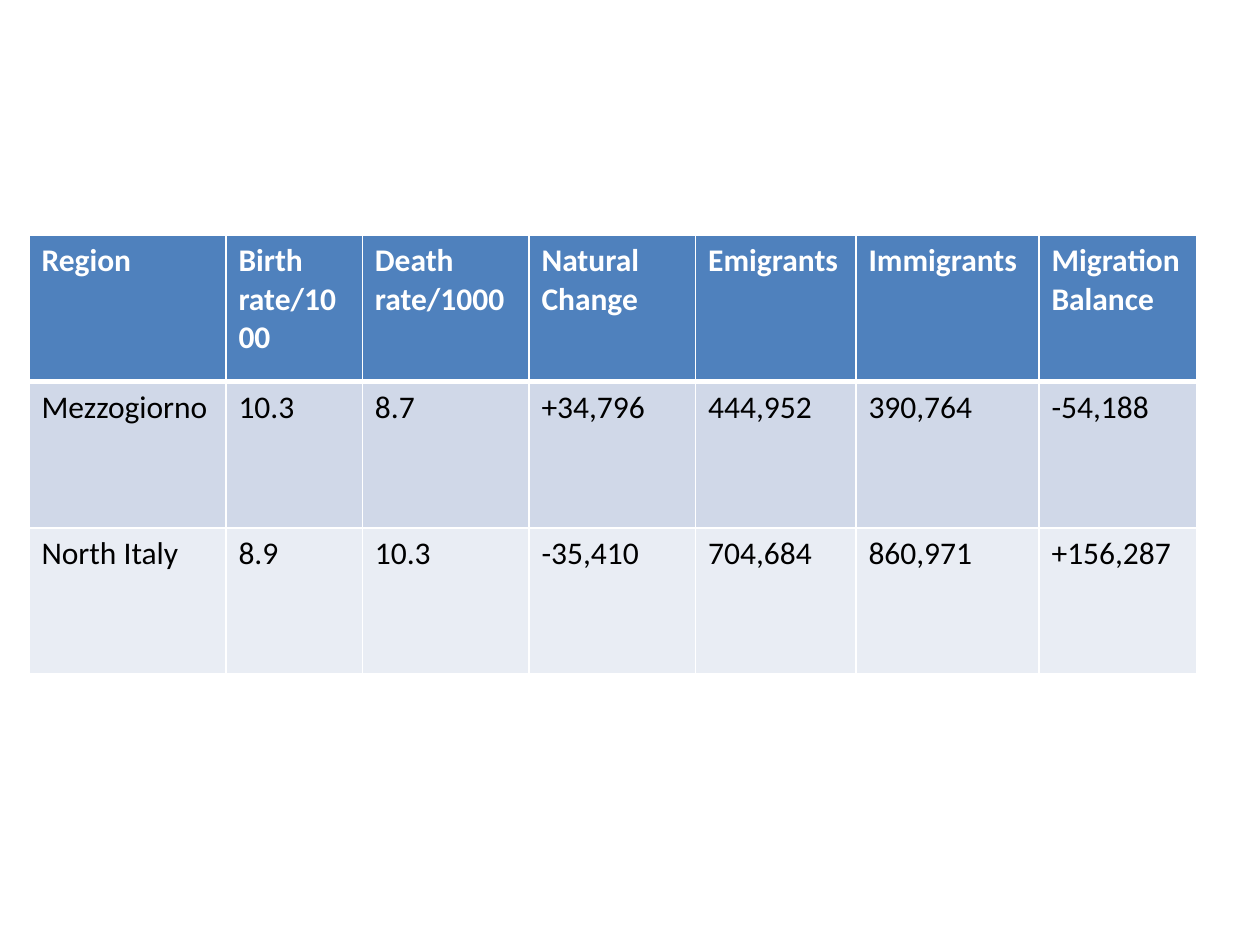
from lxml import etree
from pptx import Presentation
from pptx.dml.color import RGBColor
from pptx.oxml.ns import qn
from pptx.util import Inches, Pt

WHITE = RGBColor(0xFF, 0xFF, 0xFF)
BLACK = RGBColor(0x00, 0x00, 0x00)
HEADER_BLUE = RGBColor(0x4F, 0x81, 0xBD)
BAND_BLUE = RGBColor(0xD0, 0xD8, 0xE8)
BAND_PALE = RGBColor(0xE9, 0xED, 0xF4)
ROW_FILLS = [HEADER_BLUE, BAND_BLUE, BAND_PALE]

COLUMN_WEIGHTS = [1.56, 1.08, 1.32, 1.32, 1.27, 1.45, 1.25]
POPULATION_ROWS = [
    ["Region", "Birth rate/1000", "Death rate/1000", "Natural Change",
     "Emigrants", "Immigrants", "Migration Balance"],
    ["Mezzogiorno", "10.3", "8.7", "+34,796", "444,952", "390,764", "-54,188"],
    ["North Italy", "8.9", "10.3", "-35,410", "704,684", "860,971", "+156,287"],
]


def set_borders(cell, top, bottom):
    properties = cell._tc.get_or_add_tcPr()
    for side, points in (("L", 1), ("R", 1), ("T", top), ("B", bottom)):
        line = etree.SubElement(properties, qn(f"a:ln{side}"), w=str(Pt(points)))
        fill = etree.SubElement(line, qn("a:solidFill"))
        etree.SubElement(fill, qn("a:srgbClr"), val=str(WHITE))


def style_cell(cell, text, row_index):
    is_header = row_index == 0
    set_borders(cell, 3 if row_index == 1 else 1, 3 if is_header else 1)
    cell.fill.solid()
    cell.fill.fore_color.rgb = ROW_FILLS[row_index]
    cell.text_frame.text = text
    font = cell.text_frame.paragraphs[0].runs[0].font
    font.name = "Calibri"
    font.size = Pt(18)
    font.bold = is_header
    font.color.rgb = WHITE if is_header else BLACK


def add_population_table(page, left, top, width, height):
    row_count, column_count = len(POPULATION_ROWS), len(COLUMN_WEIGHTS)
    table = page.shapes.add_table(
        row_count, column_count, left, top, width, height).table
    for column, weight in zip(table.columns, COLUMN_WEIGHTS):
        column.width = int(width * weight / sum(COLUMN_WEIGHTS))
    for row_index, texts in enumerate(POPULATION_ROWS):
        table.rows[row_index].height = int(height / row_count)
        for column_index, text in enumerate(texts):
            style_cell(table.cell(row_index, column_index), text, row_index)


def main():
    deck = Presentation()
    deck.slide_width = Inches(10)
    deck.slide_height = Inches(7.5)
    page = deck.slides.add_slide(deck.slide_layouts[6])
    add_population_table(
        page, Inches(0.23), Inches(1.87), Inches(9.27), Inches(3.48))
    deck.save("out.pptx")


if __name__ == "__main__":
    main()
